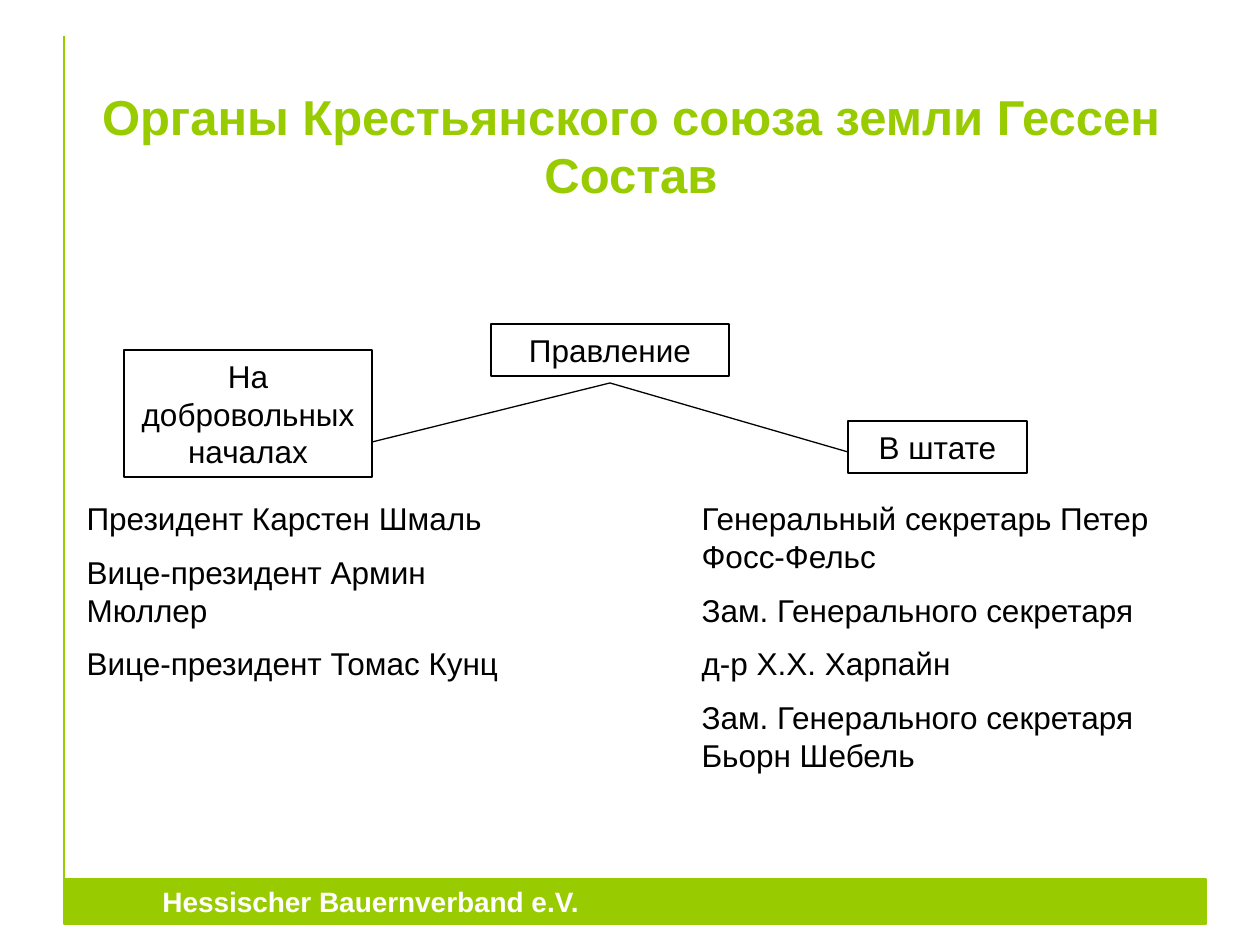
import pptx
import pptx.util
import pptx.dml.color
import pptx.enum.shapes
import pptx.enum.text
import pptx.oxml.ns
from dataclasses import dataclass
from typing import Any, NamedTuple, Optional
from lxml import etree

PX = 914400 / 126  # EMU in one px
ALIGN = pptx.enum.text.PP_ALIGN
ANCHOR = pptx.enum.text.MSO_ANCHOR


def rgb(value: str) -> pptx.dml.color.RGBColor:
    return pptx.dml.color.RGBColor.from_string(value)


def px(length: int) -> int:
    return round(length * PX)


@dataclass(frozen=True)
class Theme:
    font: str = "Arial"
    green: str = "99CC00"
    white: str = "FFFFFF"
    black: str = "000000"
    title_size: int = 28
    text_size: int = 18
    footer_size: int = 16
    list_gap: int = 9
    thin: float = 0.75
    thick: float = 1


THEME = Theme()


class Area(NamedTuple):
    left: int
    top: int
    width: int
    height: int


class Point(NamedTuple):
    x: int
    y: int


class Box(NamedTuple):
    text: str
    area: Area
    line_width: float = THEME.thin


class Line(NamedTuple):
    start: Point
    end: Point
    color: str = THEME.black
    width: float = THEME.thin


class NameList(NamedTuple):
    area: Area
    names: tuple[str, ...]


TITLE = "Органы Крестьянского союза земли Гессен\vСостав"
TITLE_AREA = Area(64, 66, 1134, 158)
FOOTER = Box("Hessischer Bauernverband e.V.", Area(64, 879, 1142, 45))
FOOTER_INDENT = 86

BOXES = (
    Box("Правление", Area(491, 324, 238, 52), THEME.thick),
    Box("На добровольных началах", Area(124, 350, 248, 127)),
    Box("В штате", Area(848, 421, 179, 52)),
)
FORK = Point(610, 383)
LINES = (
    Line(Point(64, 879), Point(64, 36), THEME.green, THEME.thick),
    Line(FORK, Point(372, 442)),
    Line(FORK, Point(848, 452)),
)
LISTS = (
    NameList(Area(74, 493, 476, 204), (
        "Президент Карстен Шмаль",
        "Вице-президент Армин Мюллер",
        "Вице-президент Томас Кунц",
    )),
    NameList(Area(689, 493, 507, 299), (
        "Генеральный секретарь Петер Фосс-Фельс",
        "Зам. Генерального секретаря",
        "д-р Х.Х. Харпайн",
        "Зам. Генерального секретаря Бьорн Шебель",
    )),
)


def apply(target: Any, values: dict[str, Any]) -> None:
    for name, value in values.items():
        setattr(target, name, value)


def place(shape: Any, area: Area) -> None:
    apply(shape, {name: px(value) for name, value in area._asdict().items()})


def format_text(shape: Any, size: int, color: str, align: Any, anchor: Any,
                bold: bool = False) -> None:
    apply(shape.text_frame, {
        "word_wrap": True,
        "auto_size": pptx.enum.text.MSO_AUTO_SIZE.NONE,
        "vertical_anchor": anchor,
    })
    for paragraph in shape.text_frame.paragraphs:
        paragraph.alignment = align
        for run in paragraph.runs:
            apply(run.font, {"name": THEME.font, "size": pptx.util.Pt(size), "bold": bold})
            run.font.color.rgb = rgb(color)


def set_indent(paragraph: Any, first_line: int) -> None:
    properties = paragraph._p.get_or_add_pPr()
    properties.set("marL", "0")
    properties.set("indent", str(px(first_line)))


def draw_box(slide: Any, box: Box, line_color: str, fill: Optional[str] = None) -> Any:
    shape = slide.shapes.add_shape(pptx.enum.shapes.MSO_SHAPE.RECTANGLE, 0, 0, 0, 0)
    place(shape, box.area)
    shape.shadow.inherit = False
    if fill:
        shape.fill.solid()
        shape.fill.fore_color.rgb = rgb(fill)
    else:
        shape.fill.background()
    shape.line.color.rgb = rgb(line_color)
    shape.line.width = pptx.util.Pt(box.line_width)
    shape.text_frame.text = box.text
    return shape


def draw_line(slide: Any, line: Line) -> None:
    connector = slide.shapes.add_connector(
        pptx.enum.shapes.MSO_CONNECTOR.STRAIGHT,
        *(px(value) for value in (*line.start, *line.end)))
    connector.line.color.rgb = rgb(line.color)
    connector.line.width = pptx.util.Pt(line.width)
    etree.SubElement(connector._element.spPr, pptx.oxml.ns.qn("a:effectLst"))


def fill_list(placeholder: Any, name_list: NameList) -> None:
    place(placeholder, name_list.area)
    placeholder.text_frame.text = "\n".join(name_list.names)
    for index, paragraph in enumerate(placeholder.text_frame.paragraphs):
        set_indent(paragraph, 0)
        etree.SubElement(paragraph._p.get_or_add_pPr(), pptx.oxml.ns.qn("a:buNone"))
        paragraph.space_before = pptx.util.Pt(THEME.list_gap if index else 0)
    format_text(placeholder, THEME.text_size, THEME.black, ALIGN.LEFT, ANCHOR.TOP)


def main() -> None:
    presentation = pptx.Presentation()
    apply(presentation, {"slide_width": px(1260), "slide_height": px(945)})
    two_content = presentation.slide_layouts[3]
    slide = presentation.slides.add_slide(two_content)

    # Footer band
    footer = draw_box(slide, FOOTER, THEME.green, THEME.green)
    set_indent(footer.text_frame.paragraphs[0], FOOTER_INDENT)
    format_text(footer, THEME.footer_size, THEME.white, ALIGN.LEFT, ANCHOR.MIDDLE, bold=True)

    # Title
    title = slide.shapes.title
    place(title, TITLE_AREA)
    title.text_frame.text = TITLE
    format_text(title, THEME.title_size, THEME.green, ALIGN.CENTER, ANCHOR.MIDDLE, bold=True)

    # Members under each branch
    for index, name_list in enumerate(LISTS, start=1):
        fill_list(slide.placeholders[index], name_list)

    # Side rule and branches
    for line in LINES:
        draw_line(slide, line)

    # Board and its two groups
    for box in BOXES:
        shape = draw_box(slide, box, THEME.black)
        format_text(shape, THEME.text_size, THEME.black, ALIGN.CENTER, ANCHOR.MIDDLE)

    presentation.save("out.pptx")


if __name__ == "__main__":
    main()
